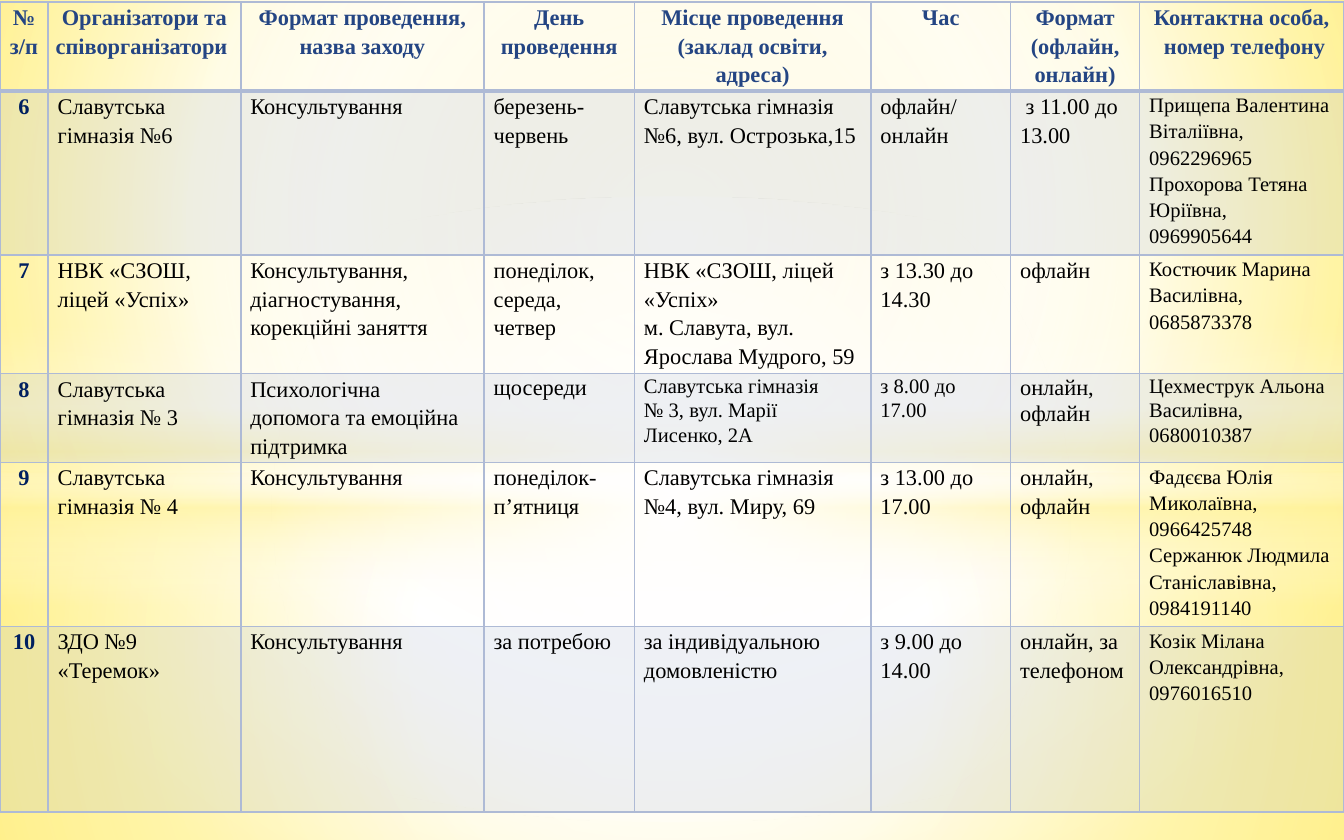
import pptx
import pptx.dml.color
import pptx.enum.shapes
import pptx.enum.text
import pptx.oxml
import pptx.oxml.ns
import pptx.util

Cm, Pt = pptx.util.Cm, pptx.util.Pt
RGB = pptx.dml.color.RGBColor
SHAPES = pptx.enum.shapes.MSO_SHAPE

COLORS = {"heading": "244583", "number": "002060", "text": "000000", "grid": "AEBAD5",
          "white": "FFFFFF", "cream": "FFF39D", "lemon": "FFF18D", "yellow": "FFE94E"}
FONT = "Times New Roman"

HEADINGS = ["№\nз/п", "Організатори та співорганізатори ", "Формат проведення, назва заходу",
            "День проведення", "Місце проведення\n(заклад освіти, адреса)", "Час",
            "Формат\n(офлайн, онлайн)", "Контактна особа,\n номер телефону"]
EVENTS = [
    ["6", "Славутська гімназія №6", "Консультування", "березень-червень",
     "Славутська гімназія №6, вул. Острозька,15", "офлайн/\nонлайн", " з 11.00 до 13.00",
     "Прищепа Валентина Віталіївна,\n0962296965\nПрохорова Тетяна Юріївна,\n0969905644"],
    ["7", "НВК «СЗОШ, ліцей «Успіх»", "Консультування, діагностування, корекційні заняття",
     "понеділок, середа, четвер",
     "НВК «СЗОШ, ліцей «Успіх»\nм. Славута, вул. Ярослава Мудрого, 59",
     "з 13.30 до 14.30", "офлайн", "Костючик Марина Василівна, 0685873378"],
    ["8", "Славутська гімназія № 3", "Психологічна допомога та емоційна підтримка",
     "щосереди", "Славутська гімназія\n№ 3, вул. Марії Лисенко, 2А", "з 8.00 до 17.00",
     "онлайн,\nофлайн", "Цехместрук Альона Василівна,\n0680010387"],
    ["9", "Славутська гімназія № 4", "Консультування", "понеділок-п’ятниця",
     "Славутська гімназія №4, вул. Миру, 69", "з 13.00 до 17.00", "онлайн, офлайн",
     "Фадєєва Юлія Миколаївна,\n0966425748\nСержанюк Людмила Станіславівна,\n0984191140"],
    ["10", "ЗДО №9 «Теремок»", "Консультування", "за потребою",
     "за індивідуальною домовленістю", "з 9.00 до 14.00", "онлайн, за телефоном",
     "Козік Мілана Олександрівна,\n0976016510"],
]
COLUMN_WIDTHS = [0.91, 3.64, 4.6, 2.84, 4.47, 2.64, 2.44, 3.86]
ROW_HEIGHTS = [1.68, 3.1, 2.24, 1.68, 3.1, 3.51]
CONTACT_COLUMN = 7
COMPACT_ROW, COMPACT_FROM = 3, 3
SMALL_CELLS = {(COMPACT_ROW, 4), (COMPACT_ROW, 5)}

# Gradient stops: position %, colour, opacity %
RADIAL_CENTRE = (50, 50, 50, 50)
BACKDROP_STOPS = [(0, "lemon", 100), (60, "white", 100), (100, "yellow", 100)]
BACKDROP_FOCUS = (20, 10, 20, 60)
# Shape, top, height, stops, focus (None for a vertical gradient)
GLOWS = [
    (SHAPES.RECTANGLE, 8.94, 6.93,
     [(0, "white", 91), (37, "white", 76), (100, "cream", 79)], RADIAL_CENTRE),
    (SHAPES.RECTANGLE, 0, 8.94,
     [(0, "white", 89), (48, "white", 62), (100, "cream", 79)], RADIAL_CENTRE),
    (SHAPES.RECTANGLE, 6.15, 5.28,
     [(0, "white", 0), (29, "white", 30), (45, "cream", 40), (55, "white", 26),
      (65, "cream", 60), (100, "white", 0)], None),
    (SHAPES.OVAL, 3.71, 11.81, [(0, "white", 100), (54, "white", 0)], RADIAL_CENTRE),
]


def parse(xml):
    """Parse a DrawingML fragment, adding the namespace to its root tag."""
    tag, rest = xml.split(" ", 1)
    return pptx.oxml.parse_xml(f"{tag} {pptx.oxml.ns.nsdecls('a')} {rest}")


def put_gradient(no_fill, stops, focus):
    """Replace an a:noFill element with a gradient."""
    stop_xml = "".join(
        f'<a:gs pos="{place * 1000}"><a:srgbClr val="{COLORS[color]}">'
        f'<a:alpha val="{opacity * 1000}"/></a:srgbClr></a:gs>'
        for place, color, opacity in stops)
    if focus:
        sides = " ".join(f'{side}="{value * 1000}"' for side, value in zip("ltrb", focus))
        direction = f'<a:path path="circle"><a:fillToRect {sides}/></a:path>'
    else:
        direction = '<a:lin ang="5400000" scaled="0"/>'
    no_fill.getparent().replace(no_fill, parse(
        f'<a:gradFill rotWithShape="1"><a:gsLst>{stop_xml}</a:gsLst>{direction}</a:gradFill>'))


def paint_background(slide, width):
    slide.background.fill.background()
    put_gradient(slide.element.xpath("p:cSld/p:bg/p:bgPr/a:noFill")[0],
                 BACKDROP_STOPS, BACKDROP_FOCUS)
    for kind, top, height, stops, focus in GLOWS:
        glow = slide.shapes.add_shape(kind, 0, Cm(top), width, Cm(height))
        glow.shadow.inherit = False
        glow.line.fill.background()
        glow.fill.background()
        put_gradient(glow.element.xpath("p:spPr/a:noFill")[0], stops, focus)


def format_cell(cell, row, column):
    is_heading = row == 0
    is_bold = is_heading or column == 0
    cell.margin_left = cell.margin_right = Cm(0.13 if is_bold else 0.18)
    cell.margin_top = cell.margin_bottom = 0

    properties = cell._tc.get_or_add_tcPr()
    widths = {"L": 1, "R": 1, "T": 2 if row == 1 else 1, "B": 2 if is_heading else 1}
    for side, points in widths.items():
        properties.append(parse(
            f'<a:ln{side} w="{Pt(points)}"><a:solidFill><a:srgbClr val="{COLORS["grid"]}"/>'
            f'</a:solidFill></a:ln{side}>'))
    if row % 2:
        cell.fill.solid()
        cell.fill.fore_color.rgb = RGB.from_string(COLORS["grid"])
        properties.xpath("a:solidFill/a:srgbClr")[0].append(parse('<a:alpha val="20000"/>'))
    else:
        cell.fill.background()

    is_small = not is_heading and (column == CONTACT_COLUMN or (row, column) in SMALL_CELLS)
    is_compact = row == COMPACT_ROW and column >= COMPACT_FROM
    color = "heading" if is_heading else "number" if column == 0 else "text"
    for para in cell.text_frame.paragraphs:
        para.line_spacing = 1.07 if is_compact else 1.15
        if is_bold:
            para.alignment = pptx.enum.text.PP_ALIGN.CENTER
        for span in para.runs:
            span.font.name = FONT
            span.font.size = Pt(11 if is_small else 12)
            span.font.bold = is_bold
            span.font.color.rgb = RGB.from_string(COLORS[color])


def add_schedule(slide, width):
    rows = [HEADINGS] + EVENTS
    table = slide.shapes.add_table(len(rows), len(HEADINGS), 0, Cm(0.04), width,
                                   Cm(sum(ROW_HEIGHTS))).table
    table.first_row = table.horz_banding = False
    for column, column_width in zip(table.columns, COLUMN_WIDTHS):
        column.width = Cm(column_width)
    for row, height in zip(table.rows, ROW_HEIGHTS):
        row.height = Cm(height)
    for row, texts in enumerate(rows):
        for column, text in enumerate(texts):
            cell = table.cell(row, column)
            cell.text_frame.text = text
            format_cell(cell, row, column)


def main():
    deck = pptx.Presentation()
    deck.slide_width, deck.slide_height = Cm(25.4), Cm(15.88)
    slide = deck.slides.add_slide(deck.slide_layouts[6])
    paint_background(slide, deck.slide_width)
    add_schedule(slide, deck.slide_width)
    deck.save("out.pptx")


if __name__ == "__main__":
    main()
